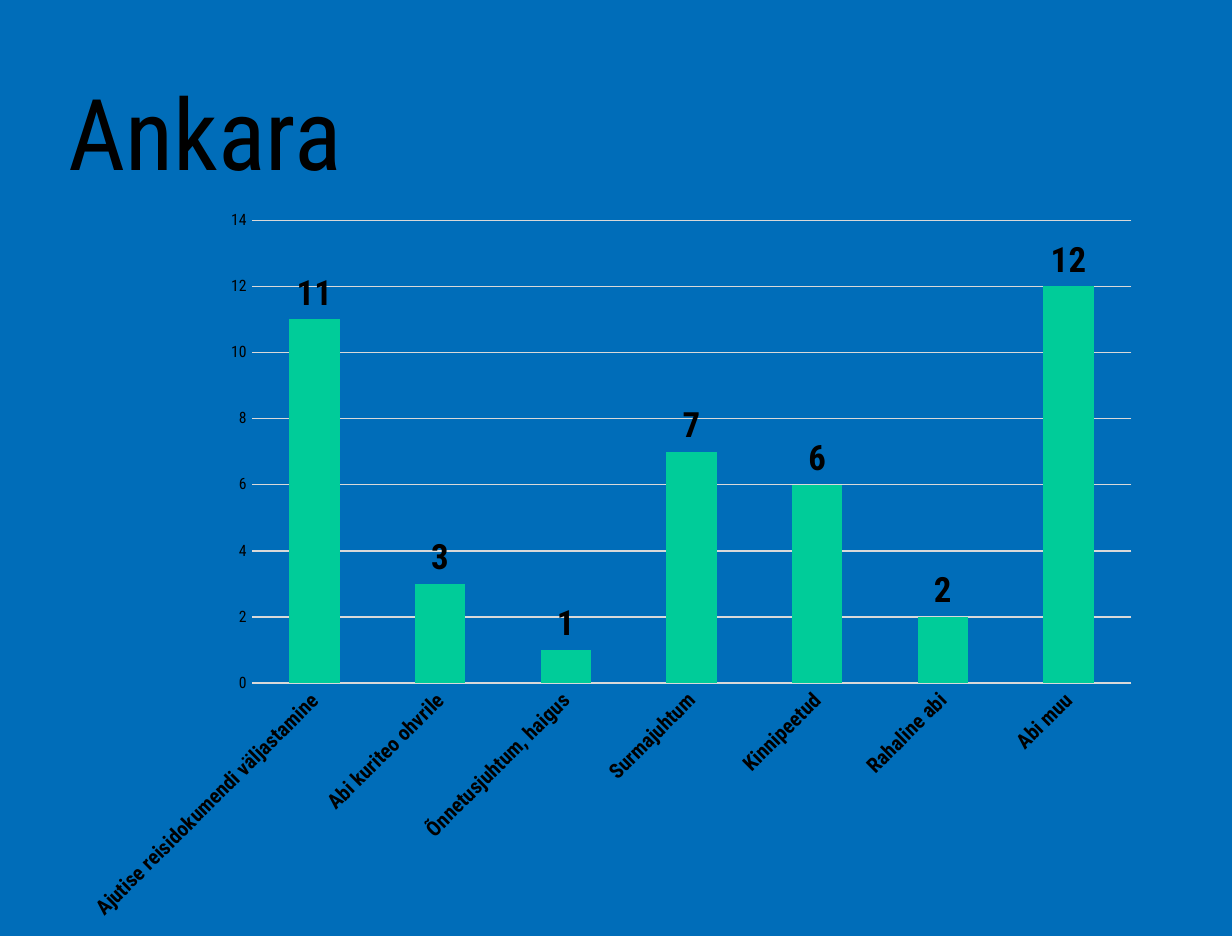
from dataclasses import dataclass

from lxml.etree import SubElement
from pptx import Presentation
from pptx.chart.chart import Chart
from pptx.chart.data import CategoryChartData
from pptx.dml.color import RGBColor
from pptx.enum.chart import XL_CHART_TYPE, XL_LABEL_POSITION, XL_TICK_MARK
from pptx.enum.text import MSO_ANCHOR
from pptx.oxml.ns import qn
from pptx.slide import Slide
from pptx.text.text import Font
from pptx.util import Inches, Pt

FACE = "Roboto Condensed"
COLORS = {"back": "006DB9", "text": "000000", "bar": "00CC99", "grid": "D9D9D9"}
CM = 1 / 2.54  # inches; the page is 25 by 19 cm
LEFT, WIDE = 0.55, 8.66
TOP, HIGH = 1.57, 5.91
# Inner plot area as shares of the chart frame
PLOT = {"x": 1.46 / WIDE, "y": 0.19 / HIGH, "w": 7.03 / WIDE, "h": 3.7 / HIGH}


@dataclass
class Case:
    label: str
    count: int


CASES = [
    Case("Ajutise reisidokumendi väljastamine", 11),
    Case("Abi kuriteo ohvrile", 3),
    Case("Õnnetusjuhtum, haigus", 1),
    Case("Surmajuhtum", 7),
    Case("Kinnipeetud", 6),
    Case("Rahaline abi", 2),
    Case("Abi muu", 12),
]


def color(name: str) -> RGBColor:
    return RGBColor.from_string(COLORS[name])


def style(font: Font, size: float, bold: bool = False) -> None:
    font.name, font.size, font.bold = FACE, Pt(size), bold
    font.color.rgb = color("text")


def add_title(slide: Slide, text: str) -> None:
    box = slide.shapes.add_textbox(Inches(LEFT), Inches(0.51), Inches(WIDE), Inches(1.2))
    frame = box.text_frame
    frame.word_wrap = True
    frame.vertical_anchor = MSO_ANCHOR.MIDDLE
    frame.margin_left = frame.margin_right = frame.margin_top = frame.margin_bottom = 0
    line = frame.paragraphs[0]
    line.text = text
    line.line_spacing = 0.88
    style(line.font, 57)


def place_plot(chart: Chart) -> None:
    """Fix the inner plot area within the chart frame."""
    area = chart._chartSpace.chart.plotArea
    for old in area.findall(qn("c:layout")):
        area.remove(old)
    layout = SubElement(area, qn("c:layout"))
    area.insert(0, layout)
    manual = SubElement(layout, qn("c:manualLayout"))
    parts = {"layoutTarget": "inner", "xMode": "edge", "yMode": "edge", **PLOT}
    for tag, value in parts.items():
        SubElement(manual, qn(f"c:{tag}")).set("val", str(value))


def style_axes(chart: Chart) -> None:
    cats, vals = chart.category_axis, chart.value_axis
    for axis, size, bold in ((cats, 12, True), (vals, 9, False)):
        axis.major_tick_mark = axis.minor_tick_mark = XL_TICK_MARK.NONE
        axis.format.line.fill.background()
        style(axis.tick_labels.font, size, bold)
    slant = cats._element.find(qn("c:txPr")).find(qn("a:bodyPr"))
    slant.set("rot", str(-45 * 60000))
    slant.set("vert", "horz")
    vals.minimum_scale, vals.maximum_scale, vals.major_unit = 0, 14, 2
    vals.has_major_gridlines = True
    grid = vals.major_gridlines.format.line
    grid.width = Pt(0.75)
    grid.color.rgb = color("grid")


def style_bars(chart: Chart) -> None:
    plot = chart.plots[0]
    plot.gap_width = 150
    plot.vary_by_categories = False
    bars = plot.series[0]
    bars.format.fill.solid()
    bars.format.fill.fore_color.rgb = color("bar")
    labels = bars.data_labels
    labels.show_value = True
    labels.position = XL_LABEL_POSITION.OUTSIDE_END
    style(labels.font, 20, True)


def add_cases(slide: Slide, cases: list[Case]) -> None:
    data = CategoryChartData()
    data.categories = [case.label for case in cases]
    data.add_series("Series 1", [case.count for case in cases])
    chart = slide.shapes.add_chart(
        XL_CHART_TYPE.COLUMN_CLUSTERED,
        Inches(LEFT), Inches(TOP), Inches(WIDE), Inches(HIGH), data,
    ).chart
    chart.has_title = chart.has_legend = False
    style(chart.font, 10)
    place_plot(chart)
    style_axes(chart)
    style_bars(chart)


def main() -> None:
    deck = Presentation()
    deck.slide_width, deck.slide_height = Inches(25 * CM), Inches(19 * CM)
    slide = deck.slides.add_slide(deck.slide_layouts[6])
    back = slide.background.fill
    back.solid()
    back.fore_color.rgb = color("back")
    add_title(slide, "Ankara")
    add_cases(slide, CASES)
    deck.save("out.pptx")


if __name__ == "__main__":
    main()
